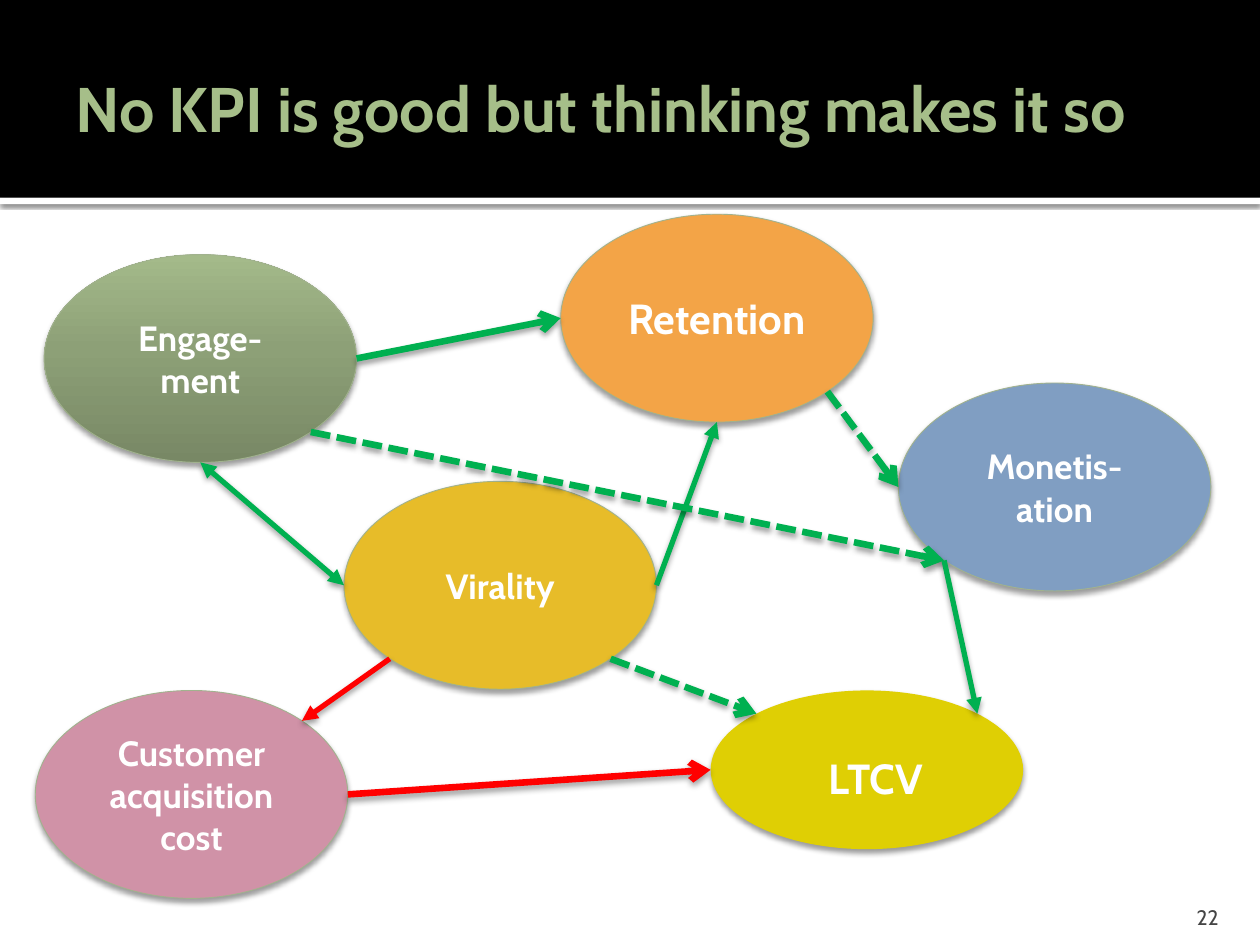
"""Build a slide that shows how game KPIs drive one another."""
from copy import deepcopy
from dataclasses import dataclass
from math import cos, radians, sin

from lxml.etree import SubElement
from pptx import Presentation
from pptx.dml.color import RGBColor
from pptx.enum.dml import MSO_LINE_DASH_STYLE as Dash
from pptx.enum.shapes import MSO_CONNECTOR as Connector, MSO_SHAPE as Shape
from pptx.enum.text import MSO_ANCHOR as Anchor, PP_ALIGN as Align
from pptx.oxml.ns import qn
from pptx.util import Inches, Pt


@dataclass(frozen=True)
class Theme:
    font: str = "Cabin"
    white: str = "FFFFFF"
    black: str = "000000"
    title: str = "A6BE89"
    number: str = "454545"
    outline: str = "A1B28E"
    good: str = "00B050"
    bad: str = "FF0000"
    engagement: tuple = ((0, "788865"), (0.55, "8DA077"), (1, "A4BA8A"))
    retention: str = "F3A447"
    virality: str = "E7BC29"
    monetisation: str = "809EC2"
    cost: str = "D092A7"
    value: str = "DFCF04"
    title_size: int = 36
    large_size: int = 24
    label_size: int = 20
    number_size: int = 12
    outline_width: float = 0.5
    thin: float = 3
    thick: float = 3.78


THEME = Theme()
OVAL_WIDTH, OVAL_HEIGHT = 2.48, 1.65
RIGHT, BOTTOM_RIGHT, BOTTOM, BOTTOM_LEFT, LEFT, TOP_LEFT, TOP_RIGHT = 0, 45, 90, 135, 180, 225, 315


def rgb(color):
    return RGBColor.from_string(color)


def add_shadow(shape, blur, distance, opacity):
    effects = shape._element.spPr.find(qn("a:effectLst"))
    if effects is None:
        effects = SubElement(shape._element.spPr, qn("a:effectLst"))
    shadow = SubElement(effects, qn("a:outerShdw"), blurRad=str(Pt(blur)), dist=str(Pt(distance)),
                        dir="5400000", algn="ctr", rotWithShape="0")
    color = SubElement(shadow, qn("a:srgbClr"), val=THEME.black)
    SubElement(color, qn("a:alpha"), val=str(opacity * 1000))


def write(shape, lines, size, color, bold=True, align=Align.LEFT, anchor=Anchor.MIDDLE,
          margins=(0.1, 0.05, 0.1, 0.05), wrap=True):
    frame = shape.text_frame
    frame.text = "\n".join(lines)
    frame.word_wrap = wrap
    frame.vertical_anchor = anchor
    frame.margin_left, frame.margin_top, frame.margin_right, frame.margin_bottom = map(Inches, margins)
    for paragraph in frame.paragraphs:
        paragraph.alignment = align
        font = paragraph.font
        font.name, font.size, font.bold = THEME.font, Pt(size), bold
        font.color.rgb = rgb(color)


def add_text(slide, box, lines, size, color, **layout):
    write(slide.shapes.add_textbox(*map(Inches, box)), lines, size, color, **layout)


def fill_gradient(shape, stops):
    shape.fill.gradient()
    shape.fill.gradient_angle = 90
    stop_list = shape._element.spPr.find(qn("a:gradFill")).find(qn("a:gsLst"))
    stop_list.insert(1, deepcopy(stop_list[0]))
    for stop, (position, color) in zip(shape.fill.gradient_stops, stops):
        stop.position = position
        stop.color.rgb = rgb(color)


def add_filled(slide, kind, box, fill, outline=None):
    shape = slide.shapes.add_shape(kind, *map(Inches, box))
    shape.shadow.inherit = False
    if isinstance(fill, tuple):
        fill_gradient(shape, fill)
    else:
        shape.fill.solid()
        shape.fill.fore_color.rgb = rgb(fill)
    if outline:
        shape.line.color.rgb = rgb(outline)
        shape.line.width = Pt(THEME.outline_width)
    else:
        shape.line.fill.background()
    return shape


def add_oval(slide, left, top, fill, lines=(), size=THEME.label_size,
             height=OVAL_HEIGHT, outline=THEME.outline):
    oval = add_filled(slide, Shape.OVAL, (left, top, OVAL_WIDTH, height), fill, outline)
    add_shadow(oval, 3.1, 2, 38)
    if lines:
        write(oval, lines, size, THEME.white, align=Align.CENTER)
    return oval


def rim(oval, angle):
    x_radius, y_radius = oval.width / 2, oval.height / 2
    return (int(oval.left + x_radius * (1 + cos(radians(angle)))),
            int(oval.top + y_radius * (1 + sin(radians(angle)))))


def add_arrow(slide, start, end, color=THEME.good, open_head=False, dotted=False, both=False):
    arrow = slide.shapes.add_connector(Connector.STRAIGHT, *rim(*start), *rim(*end))
    arrow.line.color.rgb = rgb(color)
    arrow.line.width = Pt(THEME.thick if open_head else THEME.thin)
    if dotted:
        arrow.line.dash_style = Dash.SQUARE_DOT
    line = arrow._element.spPr.find(qn("a:ln"))
    if both:
        SubElement(line, qn("a:headEnd"), type="triangle")
    SubElement(line, qn("a:tailEnd"), type="arrow" if open_head else "triangle")
    add_shadow(arrow, 3.5, 2, 38)


def add_header(slide):
    rule = add_filled(slide, Shape.RECTANGLE, (0, 1.57, 10, 0.05), THEME.white)
    add_shadow(rule, 2.5, 0.8, 60)
    add_filled(slide, Shape.RECTANGLE, (0, 0, 10, 1.57), THEME.black)
    add_text(slide, (0.5, 0.17, 9, 1.37), ["No KPI is good but thinking makes it so"],
             THEME.title_size, THEME.title, margins=(0.1, 0.05, 0.05, 0.05))


def add_diagram(slide):
    value = add_oval(slide, 5.64, 5.48, THEME.value, height=1.26, outline=None)
    retention = add_oval(slide, 4.45, 1.7, THEME.retention, ["Retention"], THEME.large_size)
    engagement = add_oval(slide, 0.35, 2.02, THEME.engagement, ["Engage-", "ment"])
    virality = add_oval(slide, 2.73, 3.82, THEME.virality, ["Virality"])
    monetisation = add_oval(slide, 7.13, 3.04, THEME.monetisation, ["Monetis-ation"])
    cost = add_oval(slide, 0.28, 5.48, THEME.cost, ["Customer", "acquisition", "cost"])
    add_text(slide, (6.48, 5.92, 0.96, 0.5), ["LTCV"], THEME.large_size, THEME.white,
             anchor=Anchor.TOP, wrap=False)

    add_arrow(slide, (engagement, RIGHT), (retention, LEFT), open_head=True)
    add_arrow(slide, (retention, BOTTOM_RIGHT), (monetisation, LEFT), open_head=True, dotted=True)
    add_arrow(slide, (engagement, BOTTOM), (virality, LEFT), both=True)
    add_arrow(slide, (virality, RIGHT), (retention, BOTTOM))
    add_arrow(slide, (cost, RIGHT), (value, LEFT), THEME.bad, open_head=True)
    add_arrow(slide, (engagement, BOTTOM_RIGHT), (monetisation, BOTTOM_LEFT),
              open_head=True, dotted=True)
    add_arrow(slide, (monetisation, BOTTOM_LEFT), (value, TOP_RIGHT))
    add_arrow(slide, (virality, BOTTOM_LEFT), (cost, TOP_RIGHT), THEME.bad)
    add_arrow(slide, (virality, BOTTOM_RIGHT), (value, TOP_LEFT), open_head=True, dotted=True)


def main():
    presentation = Presentation()
    presentation.slide_width, presentation.slide_height = Inches(10), Inches(7.5)
    slide = presentation.slides.add_slide(presentation.slide_layouts[6])
    add_header(slide)
    add_diagram(slide)
    add_text(slide, (8.97, 7.08, 0.8, 0.3), ["22"], THEME.number_size, THEME.number, bold=False,
             align=Align.RIGHT, anchor=Anchor.BOTTOM, margins=(0.1, 0.05, 0.1, 0))
    presentation.save("out.pptx")


if __name__ == "__main__":
    main()
